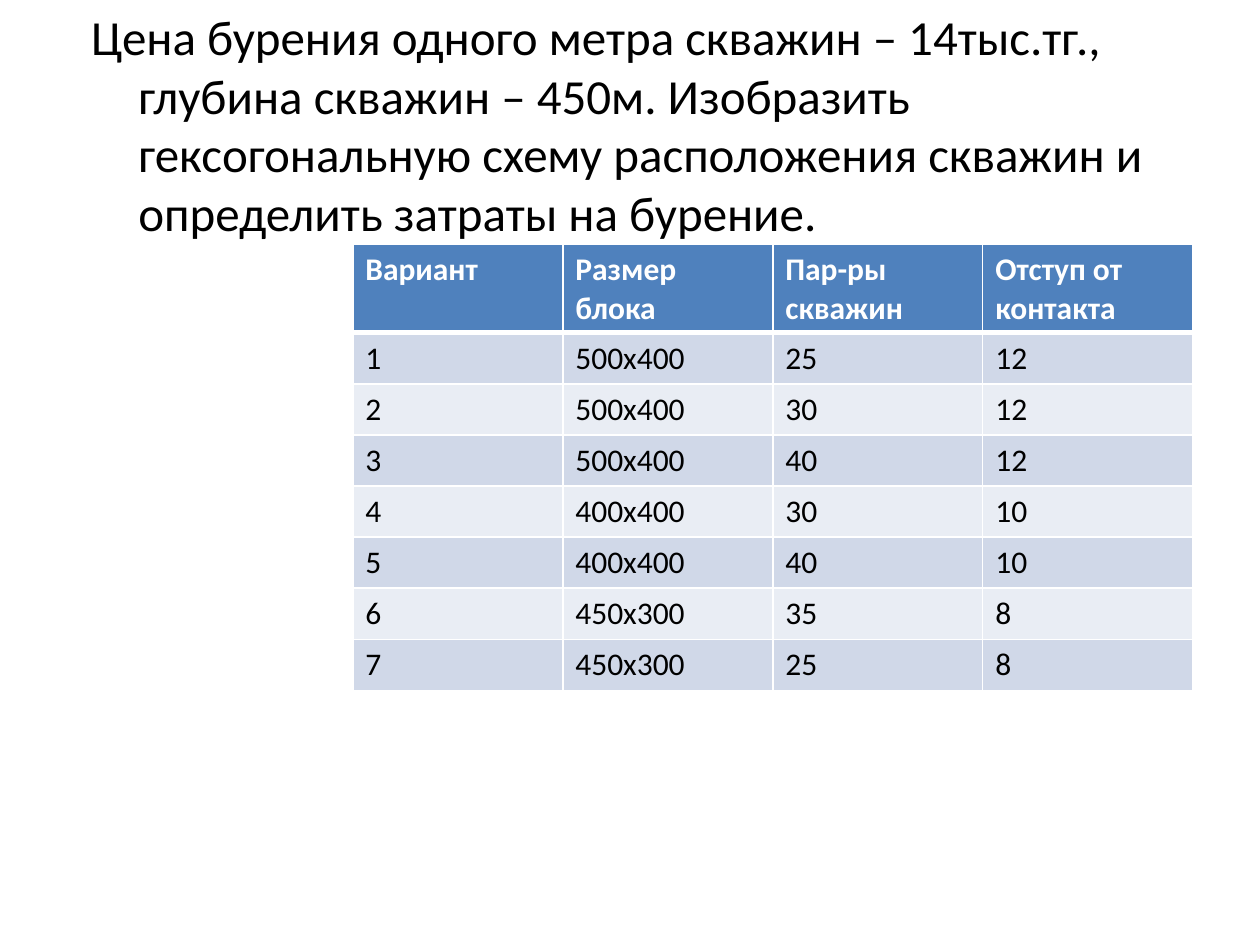
from dataclasses import dataclass

import lxml.etree
import pptx
import pptx.dml.color
import pptx.oxml.ns
import pptx.text.text
import pptx.util

Pt = pptx.util.Pt
FONT = "Calibri"
BLACK, WHITE = "000000", "FFFFFF"
HEADER_FILL = "4F81BD"
BAND_FILLS = ("D0D8E8", "E9EDF4")


@dataclass(frozen=True)
class Variant:
    number: int
    block_size: str
    well_spacing: int
    contact_offset: int

    def texts(self) -> list[str]:
        return [str(self.number), self.block_size,
                str(self.well_spacing), str(self.contact_offset)]


TASK = ("Цена бурения одного метра скважин – 14тыс.тг., глубина скважин – 450м. "
        "Изобразить гексогональную схему расположения скважин и определить "
        "затраты на бурение.")
HEADERS = ["Вариант", "Размер блока", "Пар-ры скважин", "Отступ от контакта"]
VARIANTS = [
    Variant(1, "500х400", 25, 12),
    Variant(2, "500х400", 30, 12),
    Variant(3, "500х400", 40, 12),
    Variant(4, "400х400", 30, 10),
    Variant(5, "400х400", 40, 10),
    Variant(6, "450х300", 35, 8),
    Variant(7, "450х300", 25, 8),
]


def color(value: str) -> pptx.dml.color.RGBColor:
    return pptx.dml.color.RGBColor.from_string(value)


def write(frame: pptx.text.text.TextFrame, text: str, *, size: float,
          fill: str = BLACK, bold: bool = False, space_before: float = 0,
          hanging: float = 0) -> None:
    frame.word_wrap = True
    paragraph = frame.paragraphs[0]
    paragraph.space_before = Pt(space_before)
    if hanging:
        properties = paragraph._p.get_or_add_pPr()
        properties.set("marL", str(Pt(hanging)))
        properties.set("indent", str(-Pt(hanging)))
    run = paragraph.add_run()
    run.text = text
    run.font.name = FONT
    run.font.size = Pt(size)
    run.font.bold = bold
    run.font.color.rgb = color(fill)


def set_borders(cell, widths: dict[str, float]) -> None:
    """Add white cell borders ahead of the cell fill, as the schema requires."""
    properties = cell._tc.get_or_add_tcPr()
    qn = pptx.oxml.ns.qn
    for position, side in enumerate("LRTB"):
        line = lxml.etree.Element(qn(f"a:ln{side}"), w=str(Pt(widths.get(side, 1))))
        solid = lxml.etree.SubElement(line, qn("a:solidFill"))
        lxml.etree.SubElement(solid, qn("a:srgbClr"), val=WHITE)
        properties.insert(position, line)


def add_task(slide) -> None:
    shape = slide.shapes.add_textbox(Pt(45), Pt(0), Pt(648), Pt(356.4))
    write(shape.text_frame, TASK, size=28, space_before=5.6, hanging=27)


def add_variants_table(slide) -> None:
    rows = [HEADERS] + [variant.texts() for variant in VARIANTS]
    header_height, row_height, column_width = 50.4, 29.2, 120
    table = slide.shapes.add_table(
        len(rows), len(HEADERS), Pt(201.6), Pt(139.7),
        Pt(column_width * len(HEADERS)),
        Pt(header_height + row_height * len(VARIANTS))).table
    for column in table.columns:
        column.width = Pt(column_width)
    for row_index, texts in enumerate(rows):
        is_header = row_index == 0
        table.rows[row_index].height = Pt(header_height if is_header else row_height)
        background = HEADER_FILL if is_header else BAND_FILLS[(row_index - 1) % 2]
        # A thick rule separates the header from the first variant
        widths = {0: {"B": 3}, 1: {"T": 3}}.get(row_index, {})
        for column_index, text in enumerate(texts):
            cell = table.cell(row_index, column_index)
            cell.fill.solid()
            cell.fill.fore_color.rgb = color(background)
            write(cell.text_frame, text, size=18, bold=is_header,
                  fill=WHITE if is_header else BLACK)
            set_borders(cell, widths)


def main() -> None:
    presentation = pptx.Presentation()
    presentation.slide_width, presentation.slide_height = Pt(720), Pt(540)
    slide = presentation.slides.add_slide(presentation.slide_layouts[6])

    # Task statement
    add_task(slide)
    # Table of variants
    add_variants_table(slide)

    presentation.save("out.pptx")


if __name__ == "__main__":
    main()
